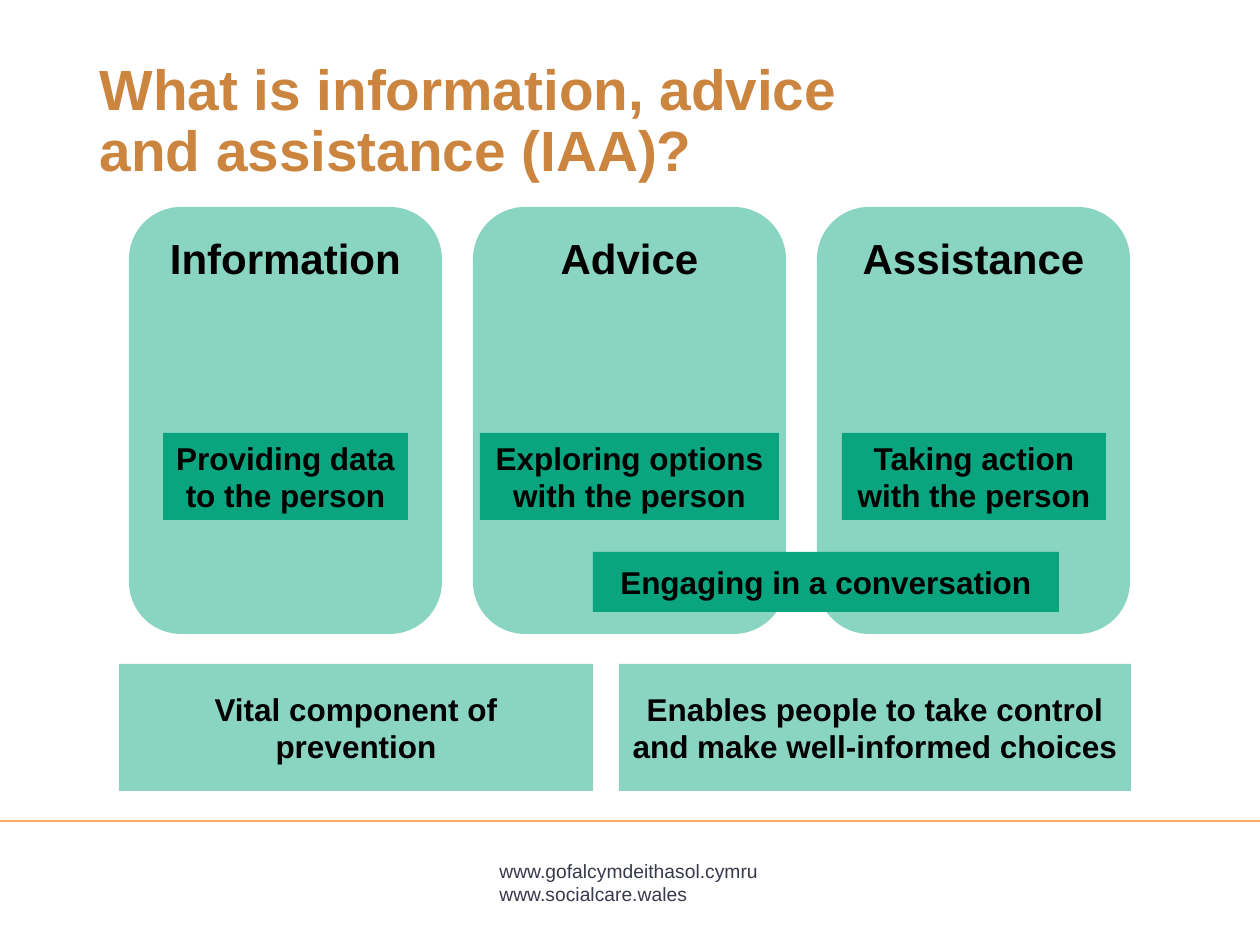
import pptx
import pptx.util
import pptx.dml.color
import pptx.enum.shapes
import pptx.enum.text
import pptx.oxml
import pptx.oxml.ns
from dataclasses import dataclass
from lxml import etree

SCALE = 914400 / 126
SHAPE = pptx.enum.shapes.MSO_SHAPE
ALIGN = pptx.enum.text.PP_ALIGN
ANCHOR = pptx.enum.text.MSO_ANCHOR


@dataclass(frozen=True)
class Theme:
    font: str = "Arial"
    title: str = "CB853F"
    panel: str = "16AD85"
    label: str = "0AA47E"
    ink: str = "000000"
    foot: str = "37394C"
    rule: str = "F7AB64"
    title_pt: float = 32.4
    head_pt: float = 24
    body_pt: float = 18
    foot_pt: float = 11


THEME = Theme()


def px(n):
    return pptx.util.Emu(round(n * SCALE))


def rgb(code):
    return pptx.dml.color.RGBColor.from_string(code)


def write(frame, text, size, color, bold=True, align=ALIGN.LEFT):
    frame.word_wrap = True
    frame.text = text
    for para in frame.paragraphs:
        para.alignment = align
        for run in para.runs:
            font = run.font
            font.name, font.size, font.bold = THEME.font, pptx.util.Pt(size), bold
            font.color.rgb = rgb(color)


def fade(shape):
    """Make the solid fill half transparent."""
    tint = shape.fill._xPr.find(".//" + pptx.oxml.ns.qn("a:srgbClr"))
    etree.SubElement(tint, pptx.oxml.ns.qn("a:alpha"), val="50000")


def add_box(slide, kind, area, fill, text, size):
    shape = slide.shapes.add_shape(kind, *map(px, area))
    shape.shadow.inherit = False
    shape.fill.solid()
    shape.fill.fore_color.rgb = rgb(fill)
    shape.line.fill.background()
    write(shape.text_frame, text, size, THEME.ink, align=ALIGN.CENTER)
    shape.text_frame.vertical_anchor = ANCHOR.MIDDLE
    return shape


def add_panel(slide, left, text):
    area = (left, 207, 313, 427)
    panel = add_box(slide, SHAPE.ROUNDED_RECTANGLE, area, THEME.panel, text, THEME.head_pt)
    fade(panel)
    panel.text_frame.vertical_anchor = ANCHOR.TOP
    panel.text_frame.margin_top = px(10)


def add_label(slide, area, text):
    add_box(slide, SHAPE.RECTANGLE, area, THEME.label, text, THEME.body_pt)


def add_result(slide, left, width, text):
    area = (left, 664, width, 127)
    fade(add_box(slide, SHAPE.RECTANGLE, area, THEME.panel, text, THEME.body_pt))


def set_title(slide, text):
    title = slide.shapes.title
    title.left, title.top, title.width, title.height = map(px, (87, 50, 845, 142))
    frame = title.text_frame
    write(frame, text, THEME.title_pt, THEME.title)
    frame.auto_size = pptx.enum.text.MSO_AUTO_SIZE.NONE
    frame.vertical_anchor = ANCHOR.TOP
    frame.margin_top = px(11)
    frame.paragraphs[0].line_spacing = 0.9


def add_footer(slide):
    box = slide.shapes.add_textbox(*map(px, (487, 853, 285, 58)))
    write(box.text_frame, "www.gofalcymdeithasol.cymru\nwww.socialcare.wales",
          THEME.foot_pt, THEME.foot, bold=False)
    rule = slide.shapes.add_connector(
        pptx.enum.shapes.MSO_CONNECTOR.STRAIGHT, *map(px, (0, 821, 1260, 821)))
    rule.line.color.rgb = rgb(THEME.rule)
    rule.line.width = pptx.util.Pt(1)
    etree.SubElement(rule._element.spPr, pptx.oxml.ns.qn("a:effectLst"))


def main():
    deck = pptx.Presentation()
    deck.slide_width, deck.slide_height = px(1260), px(945)
    slide = deck.slides.add_slide(deck.slide_layouts[5])
    add_footer(slide)
    set_title(slide, "What is information, advice\vand assistance (IAA)?")

    for i, head in enumerate(("Information", "Advice", "Assistance")):
        add_panel(slide, 129 + 344 * i, head)

    for left, width, text in (
        (163, 245, "Providing data to the person"),
        (480, 299, "Exploring options with the person"),
        (842, 264, "Taking action with the person"),
    ):
        add_label(slide, (left, 433, width, 87), text)
    add_label(slide, (593, 552, 466, 60), "Engaging in a conversation")

    add_result(slide, 119, 474, "Vital component of prevention")
    add_result(slide, 619, 512,
               "Enables people to take control and make well-informed choices")
    deck.save("out.pptx")


if __name__ == "__main__":
    main()
